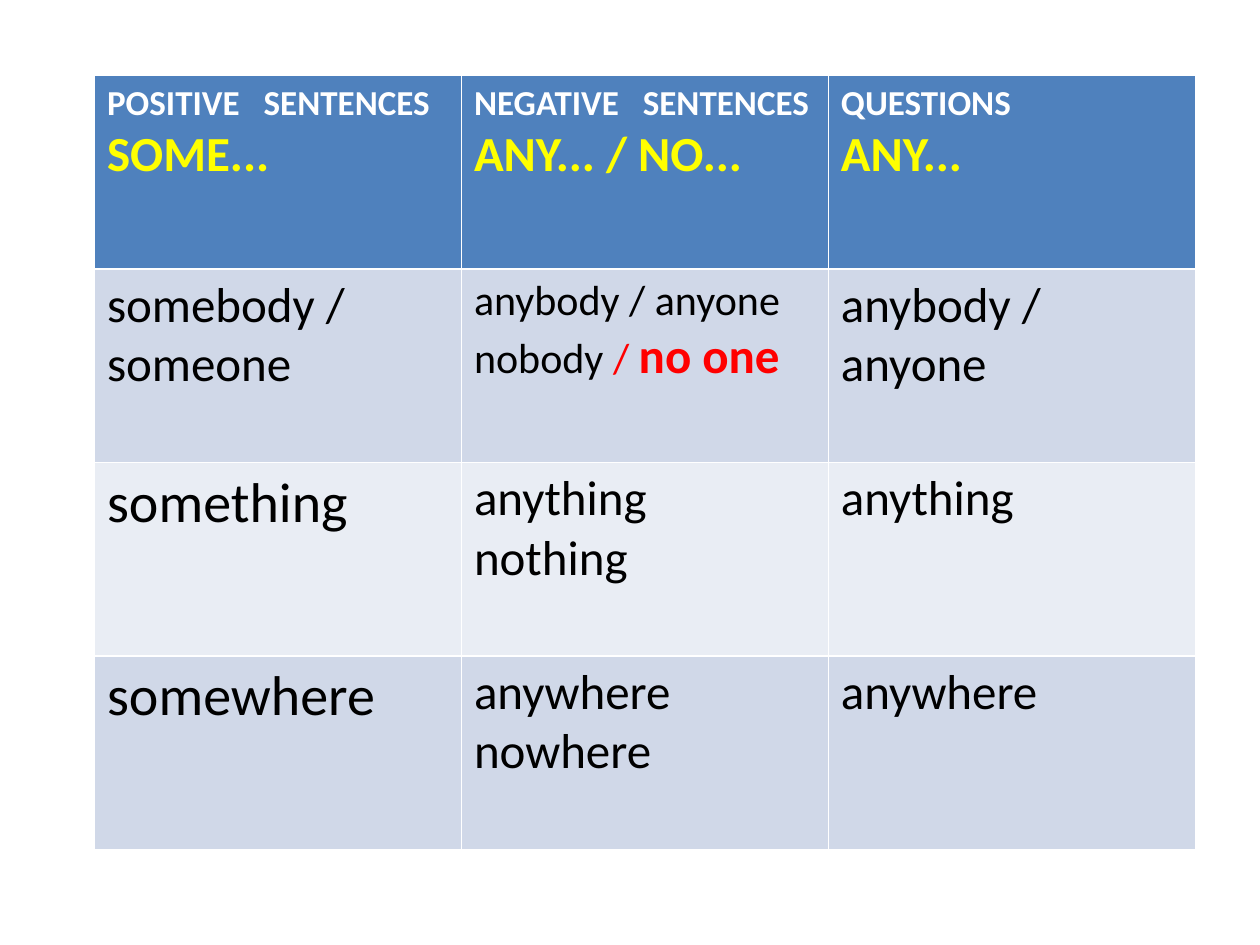
from dataclasses import dataclass

from pptx import Presentation
from pptx.dml.color import RGBColor
from pptx.util import Pt

BLANK_LAYOUT = 6
FONT = "Calibri"
COLORS = {
    "header": "4F81BD",
    "band_dark": "D0D8E8",
    "band_light": "E9EDF4",
    "white": "FFFFFF",
    "yellow": "FFFF00",
    "black": "000000",
    "red": "FF0000",
}
TABLE_LEFT, TABLE_TOP = 54, 43.2
COLUMN_WIDTH, ROW_HEIGHT = 209.7, 110.6
WORD_GAP = 9


@dataclass(frozen=True)
class Span:
    """A stretch of text; unset values follow the line it stands in."""
    text: str
    size: float | None = None
    color: str | None = None
    bold: bool | None = None
    tracking: float = 0


@dataclass(frozen=True)
class Line:
    spans: tuple[Span, ...]
    size: float = 28
    color: str = "black"
    bold: bool = False


def word(text: str, size: float = 28) -> Line:
    return Line((Span(text),), size)


def heading(sentence_type: str, pronouns: str) -> list[Line]:
    first, *rest = sentence_type.split()
    spans = [Span(first)]
    for part in rest:
        spans += [Span(" ", tracking=WORD_GAP), Span(part)]
    return [
        Line(tuple(spans), 20, "white", True),
        Line((Span(pronouns),), 28, "yellow", True),
    ]


def style_font(font, size: float | None, color: str | None, bold: bool | None) -> None:
    if size is not None:
        font.size = Pt(size)
    if color is not None:
        font.color.rgb = RGBColor.from_string(COLORS[color])
    if bold is not None:
        font.bold = bold


def fill_cell(cell, lines: list[Line], fill: str) -> None:
    cell.fill.solid()
    cell.fill.fore_color.rgb = RGBColor.from_string(COLORS[fill])
    frame = cell.text_frame
    for index, line in enumerate(lines):
        paragraph = frame.add_paragraph() if index else frame.paragraphs[0]
        paragraph.font.name = FONT
        style_font(paragraph.font, line.size, line.color, line.bold)
        for span in line.spans:
            run = paragraph.add_run()
            run.text = span.text
            style_font(run.font, span.size, span.color, span.bold)
            if span.tracking:
                run._r.get_or_add_rPr().set("spc", str(span.tracking * 100))


NOBODY = Line((
    Span("nobody "),
    Span("/ ", color="red"),
    Span("no one", size=28, color="red", bold=True),
), 24)

ROWS = [
    ("header", [
        heading("POSITIVE SENTENCES", "SOME..."),
        heading("NEGATIVE SENTENCES", "ANY... / NO..."),
        heading("QUESTIONS", "ANY..."),
    ]),
    ("band_dark", [
        [word("somebody / someone")],
        [word("anybody / anyone", 24), NOBODY],
        [word("anybody / anyone")],
    ]),
    ("band_light", [
        [word("something", 32)],
        [word("anything"), word("nothing")],
        [word("anything")],
    ]),
    ("band_dark", [
        [word("somewhere", 32)],
        [word("anywhere"), word("nowhere")],
        [word("anywhere")],
    ]),
]


def main() -> None:
    presentation = Presentation()
    presentation.slide_width, presentation.slide_height = Pt(720), Pt(540)
    slide = presentation.slides.add_slide(presentation.slide_layouts[BLANK_LAYOUT])
    column_count = len(ROWS[0][1])
    pronoun_table = slide.shapes.add_table(
        len(ROWS), column_count, Pt(TABLE_LEFT), Pt(TABLE_TOP),
        Pt(COLUMN_WIDTH * column_count), Pt(ROW_HEIGHT * len(ROWS)),
    ).table
    for row_index, (fill, cells) in enumerate(ROWS):
        for column_index, lines in enumerate(cells):
            fill_cell(pronoun_table.cell(row_index, column_index), lines, fill)
    presentation.save("out.pptx")


if __name__ == "__main__":
    main()
